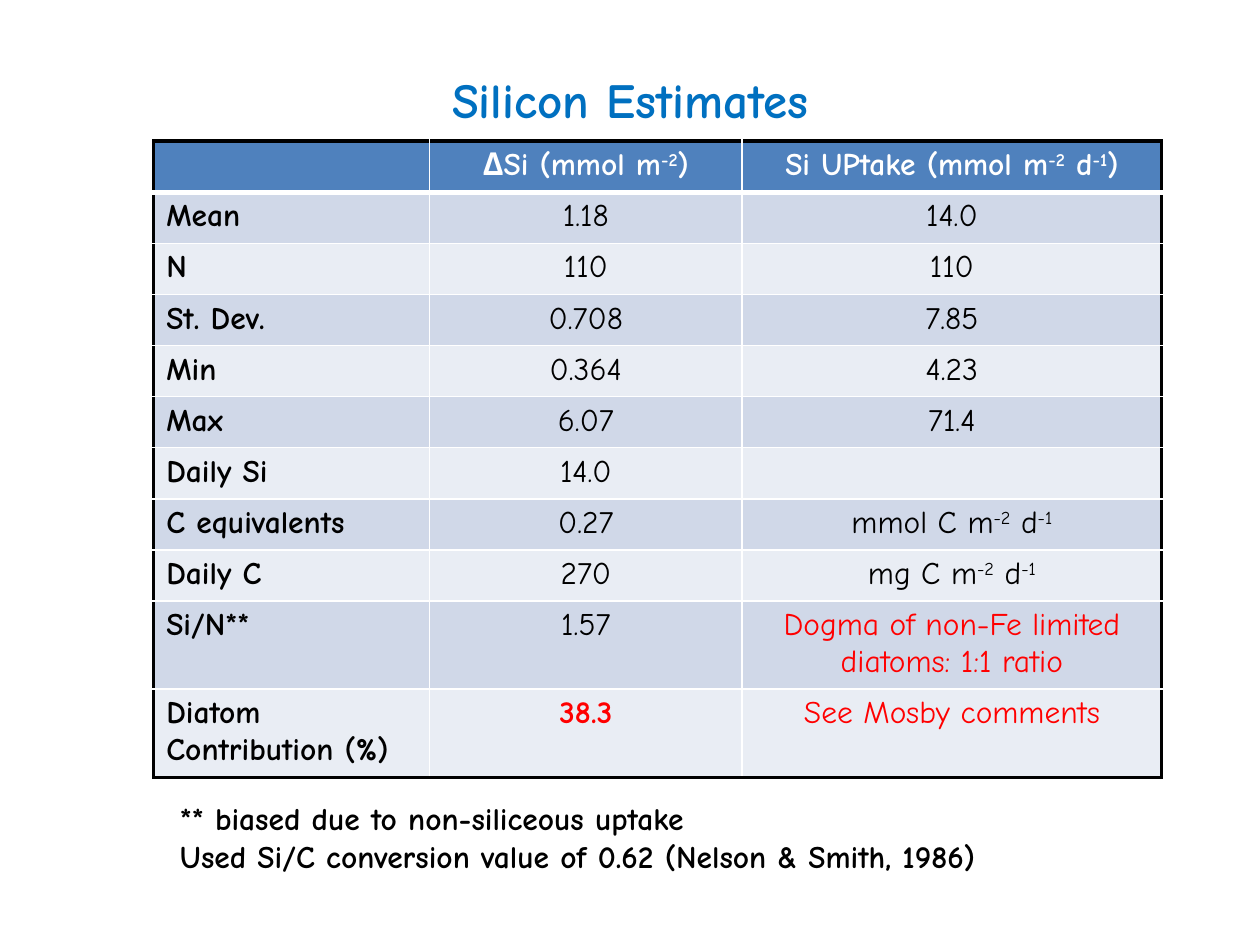
from dataclasses import dataclass

from lxml import etree
from pptx import Presentation
from pptx import util as u
from pptx.dml.color import RGBColor
from pptx.enum import text
from pptx.oxml import ns


@dataclass(frozen=True)
class Theme:
    font: str = "Comic Neue"
    title_size: int = 28
    body_size: int = 18
    title: str = "0070C0"
    ink: str = "000000"
    light: str = "FFFFFF"
    alert: str = "FF0000"
    header: str = "4F81BD"
    bands: tuple = ("E9EDF4", "D0D8E8")
    frame_line: float = 2.25
    grid_line: float = 1
    header_line: float = 3


THEME = Theme()

# A pair of ^ marks encloses a superscript
ROWS = [
    ("", "ΔSi (mmol m^-2^)", "Si UPtake (mmol m^-2^ d^-1^)"),
    ("Mean", "1.18", "14.0"),
    ("N", "110", "110"),
    ("St. Dev.", "0.708", "7.85"),
    ("Min", "0.364", "4.23"),
    ("Max", "6.07", "71.4"),
    ("Daily Si", "14.0", ""),
    ("C equivalents", "0.27", "mmol C m^-2^ d^-1^"),
    ("Daily C", "270", "mg C m^-2^ d^-1^"),
    ("Si/N**", "1.57", "Dogma of non-Fe limited diatoms: 1:1 ratio"),
    ("Diatom Contribution (%)", "38.3", "See Mosby comments"),
]
ALERTS = {(9, 2), (10, 1), (10, 2)}
BOLD_VALUES = {(10, 1)}
COLUMN_WIDTHS = (2.19, 2.48, 3.33)
ROW_HEIGHT = 3.65 / 9  # nine single-line rows share 3.65 inches

NOTES = [
    "** biased due to non-siliceous uptake",
    "Used Si/C conversion value of 0.62 (Nelson & Smith, 1986)",
]


def inches(box):
    return [u.Inches(v) for v in box]


def add_runs(p, marked, size, color, bold):
    """Fill a paragraph, raising the parts between ^ marks."""
    for i, part in enumerate(marked.split("^")):
        if not part:
            continue
        r = p.add_run()
        r.text = part
        r.font.name = THEME.font
        r.font.size = u.Pt(size)
        r.font.bold = bold
        r.font.color.rgb = RGBColor.from_string(color)
        if i % 2:
            r.font._element.set("baseline", "30000")


def set_border(cell, side, color, width):
    tcPr = cell._tc.get_or_add_tcPr()
    ln = etree.SubElement(tcPr, ns.qn(f"a:ln{side}"), w=str(u.Pt(width)))
    fill = etree.SubElement(ln, ns.qn("a:solidFill"))
    etree.SubElement(fill, ns.qn("a:srgbClr"), val=color)


def add_title(slide, box):
    sp = slide.shapes.title
    sp.left, sp.top, sp.width, sp.height = inches(box)
    tf = sp.text_frame
    tf.word_wrap = False
    tf.auto_size = text.MSO_AUTO_SIZE.SHAPE_TO_FIT_TEXT
    tf.vertical_anchor = text.MSO_ANCHOR.TOP
    p = tf.paragraphs[0]
    p.alignment = text.PP_ALIGN.CENTER
    add_runs(p, "Silicon Estimates", THEME.title_size, THEME.title, True)


def format_cell(cell, row, col):
    # Outer edges are black, inner lines white
    frame = (THEME.ink, THEME.frame_line)
    grid = (THEME.light, THEME.grid_line)
    below_header = (THEME.light, THEME.header_line)
    last_row, last_col = len(ROWS) - 1, len(COLUMN_WIDTHS) - 1
    set_border(cell, "L", *(frame if col == 0 else grid))
    set_border(cell, "R", *(frame if col == last_col else grid))
    set_border(cell, "T", *(frame if row == 0 else grid))
    set_border(cell, "B", *(below_header if row == 0 else
                            frame if row == last_row else grid))
    cell.fill.solid()
    fill = THEME.header if row == 0 else THEME.bands[row % 2]
    cell.fill.fore_color.rgb = RGBColor.from_string(fill)

    color = (THEME.light if row == 0 else
             THEME.alert if (row, col) in ALERTS else THEME.ink)
    bold = row == 0 or col == 0 or (row, col) in BOLD_VALUES
    p = cell.text_frame.paragraphs[0]
    p.alignment = text.PP_ALIGN.CENTER if col else text.PP_ALIGN.LEFT
    add_runs(p, ROWS[row][col], THEME.body_size, color, bold)


def add_estimates(slide, box):
    sp = slide.shapes.add_table(len(ROWS), len(COLUMN_WIDTHS), *inches(box))
    table = sp.table
    for column, width in zip(table.columns, COLUMN_WIDTHS):
        column.width = u.Inches(width)
    for i, row in enumerate(table.rows):
        row.height = u.Inches(ROW_HEIGHT)
        for j, cell in enumerate(row.cells):
            format_cell(cell, i, j)
    sp.height = u.Inches(box[3])  # the two wrapped rows grow to fill this


def add_notes(slide, box):
    tf = slide.shapes.add_textbox(*inches(box)).text_frame
    tf.word_wrap = True
    tf.auto_size = text.MSO_AUTO_SIZE.SHAPE_TO_FIT_TEXT
    for i, note in enumerate(NOTES):
        p = tf.add_paragraph() if i else tf.paragraphs[0]
        add_runs(p, note, THEME.body_size, THEME.ink, True)


def main():
    prs = Presentation()
    prs.slide_width, prs.slide_height = u.Inches(10), u.Inches(7.5)
    slide = prs.slides.add_slide(prs.slide_layouts.get_by_name("Title Only"))
    add_title(slide, (3.28, 0.5, 3.44, 0.57))
    add_estimates(slide, (1.22, 1.12, 8, 5.05))
    add_notes(slide, (1.33, 6.29, 7.92, 0.71))
    prs.save("out.pptx")


if __name__ == "__main__":
    main()
